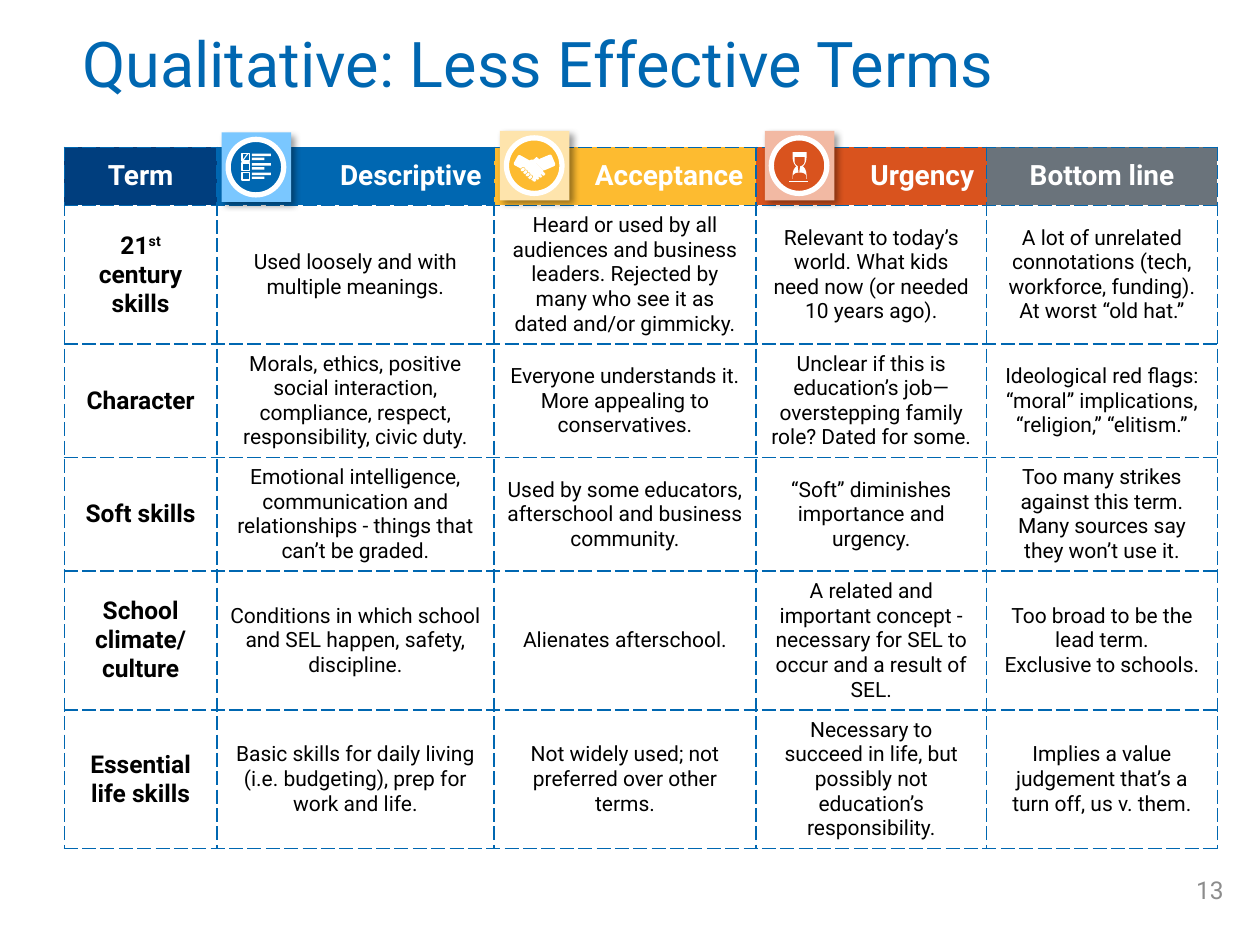
from dataclasses import dataclass
from math import cos, pi, sin

from lxml import etree
from pptx import Presentation
from pptx.dml.color import RGBColor
from pptx.enum.shapes import MSO_SHAPE
from pptx.enum.text import MSO_ANCHOR, PP_ALIGN
from pptx.oxml import parse_xml
from pptx.oxml.ns import nsdecls, qn
from pptx.util import Cm, Pt

RECT, ROUND, OVAL = MSO_SHAPE.RECTANGLE, MSO_SHAPE.ROUNDED_RECTANGLE, MSO_SHAPE.OVAL
FINGER, TRIANGLE = MSO_SHAPE.FLOWCHART_TERMINATOR, MSO_SHAPE.ISOSCELES_TRIANGLE
LEFT, CENTER, RIGHT = PP_ALIGN.LEFT, PP_ALIGN.CENTER, PP_ALIGN.RIGHT
MIDDLE = MSO_ANCHOR.MIDDLE
FONT = "Roboto"
TITLE_ONLY = 5

COLORS = {
    "navy": "003E7E", "blue": "0067B1", "sky": "7AC7FF",
    "gold": "FDBB30", "cream": "FEE4AC", "orange": "D9531E", "peach": "F2B9A3",
    "slate": "6A737B", "gray": "8C8C8C", "white": "FFFFFF", "black": "000000",
}

HEADERS = [
    ("Term", "navy", CENTER), ("Descriptive", "blue", RIGHT),
    ("Acceptance", "gold", RIGHT), ("Urgency", "orange", RIGHT),
    ("Bottom line", "slate", CENTER),
]
TERMS = [
    ["21st century skills", "Used loosely and with multiple meanings.",
     "Heard or used by all audiences and business leaders. Rejected by many who see it "
     "as dated and/or gimmicky.",
     "Relevant to today’s world. What kids need now (or needed 10 years ago).",
     "A lot of unrelated connotations (tech, workforce, funding). At worst “old hat.”"],
    ["Character",
     "Morals, ethics, positive social interaction, compliance, respect, responsibility, "
     "civic duty.",
     "Everyone understands it. More appealing to conservatives.",
     "Unclear if this is education’s job—overstepping family role? Dated for some.",
     "Ideological red flags: “moral” implications, “religion,” “elitism.”"],
    ["Soft skills",
     "Emotional intelligence, communication and relationships - things that can’t be graded.",
     "Used by some educators, afterschool and business community.",
     "“Soft” diminishes importance and urgency.",
     "Too many strikes against this term. Many sources say they won’t use it."],
    ["School climate/ culture",
     "Conditions in which school and SEL happen, safety, discipline.",
     "Alienates afterschool.",
     "A related and important concept - necessary for SEL to occur and a result of SEL.",
     "Too broad to be the lead term.\nExclusive to schools."],
    ["Essential life skills",
     "Basic skills for daily living (i.e. budgeting), prep for work and life.",
     "Not widely used; not preferred over other terms.",
     "Necessary to succeed in life, but possibly not education’s responsibility.",
     "Implies a value judgement that’s a turn off, us v. them."],
]
COLUMN_WIDTHS = [3.07, 5.59, 5.28, 4.65, 4.65]
ROW_HEIGHTS = [1.17, 2.79, 2.29, 2.29, 2.79, 2.29]


@dataclass
class Piece:
    """A preset shape inside a badge, in cm from the badge corner."""
    kind: int
    x: float
    y: float
    w: float
    h: float
    rotation: float = 0
    fill: str | None = "white"
    line: str | None = None
    weight: float = 0.25


@dataclass
class Bulb:
    """A flat-based dome of the hourglass, in cm from the badge corner."""
    half_width: float
    base: float
    shoulder: float
    tip: float
    fill: str = "white"


@dataclass
class Badge:
    x: float
    y: float
    square: str
    disc: str
    symbol: list


HANDSHAKE = [
    Piece(ROUND, 0.30, 0.53, 0.30, 0.23, 29.1),
    *[Piece(FINGER, 0.51 + 0.06 * i, 0.89 - 0.04 * i, 0.25, 0.08, 45.3, line="gold")
      for i in range(4)],
    Piece(ROUND, 0.48, 0.64, 0.36, 0.30, 45.1),
    *[Piece(OVAL, 0.56 - 0.05 * i, 0.89 - 0.05 * i, 0.10, 0.08, 324.7, line="gold")
      for i in range(4)],
    Piece(FINGER, 0.53, 0.61, 0.23, 0.08, 322.8),
    Piece(ROUND, 0.76, 0.51, 0.10, 0.30, 313.8),
    Piece(ROUND, 0.81, 0.51, 0.28, 0.25, 336.8),
]
HOURGLASS = [
    Bulb(0.14, 1.02, 0.89, 0.69), Bulb(0.14, 0.41, 0.53, 0.74),
    *[Piece(RECT, 0.48, y, 0.41, 0.05, line="orange", weight=0.85) for y in (0.36, 0.99)],
    Bulb(0.10, 0.53, 0.61, 0.71, "orange"), Bulb(0.13, 0.97, 0.91, 0.84, "orange"),
    Piece(TRIANGLE, 0.66, 0.69, 0.05, 0.20, 180, "orange"),
]
ROWS_Y = [0.43 + 0.19 * i for i in range(3)]
CHECKLIST = [
    *[Piece(RECT, 0.41, y, 0.15, 0.15, fill=None, line="white", weight=0.85) for y in ROWS_Y],
    *[Piece(RECT, 0.61, y + dy, w, 0.05) for y in ROWS_Y for dy, w in ((0, 0.38), (0.08, 0.25))],
]
BADGES = [
    Badge(10.08, 2.64, "cream", "gold", HANDSHAKE),
    Badge(15.42, 2.64, "peach", "orange", HOURGLASS),
    Badge(4.47, 2.67, "sky", "blue", CHECKLIST),
]


def rgb(name: str) -> RGBColor:
    return RGBColor.from_string(COLORS[name])


def style_text(frame, size: float, color: str, align, bold: bool = False) -> None:
    for paragraph in frame.paragraphs:
        paragraph.alignment = align
        for run in paragraph.runs:
            run.font.name, run.font.size, run.font.bold = FONT, Pt(size), bold
            run.font.color.rgb = rgb(color)


def paint(shape, fill: str | None, line: str | None = None, weight: float = 0) -> None:
    shape.shadow.inherit = False
    if fill:
        shape.fill.solid()
        shape.fill.fore_color.rgb = rgb(fill)
    else:
        shape.fill.background()
    if line:
        shape.line.color.rgb, shape.line.width = rgb(line), Pt(weight)
    else:
        shape.line.fill.background()


def add_piece(shapes, badge: Badge, piece: Piece):
    shape = shapes.add_shape(piece.kind, Cm(badge.x + piece.x), Cm(badge.y + piece.y),
                             Cm(piece.w), Cm(piece.h))
    shape.rotation = piece.rotation
    paint(shape, piece.fill, piece.line, piece.weight)
    return shape


def add_bulb(shapes, badge: Badge, bulb: Bulb) -> None:
    center, steps = badge.x + 0.70, 16
    dome = [(Cm(center - bulb.half_width * cos(pi * i / steps)),
             Cm(badge.y + bulb.shoulder + (bulb.tip - bulb.shoulder) * sin(pi * i / steps)))
            for i in range(steps + 1)]
    base = Cm(badge.y + bulb.base)
    builder = shapes.build_freeform(dome[0][0], base)
    builder.add_line_segments(dome + [(dome[-1][0], base)], close=True)
    paint(builder.convert_to_shape(), bulb.fill)


def add_badge(slide, badge: Badge):
    shapes = slide.shapes.add_group_shape().shapes
    square = add_piece(shapes, badge, Piece(RECT, 0, 0, 1.4, 1.4, fill=badge.square))
    shadow = etree.SubElement(square._element.spPr.find(qn("a:effectLst")), qn("a:outerShdw"),
                              blurRad=str(Pt(4)), dist=str(Pt(3)), dir="2700000")
    tint = etree.SubElement(shadow, qn("a:srgbClr"), val=COLORS["black"])
    etree.SubElement(tint, qn("a:alpha"), val="40000")
    add_piece(shapes, badge, Piece(OVAL, 0.13, 0.14, 1.12, 1.12, 0, badge.disc, "white", 3))
    for piece in badge.symbol:
        (add_bulb if isinstance(piece, Bulb) else add_piece)(shapes, badge, piece)
    return shapes


def format_cell(cell, fill: str) -> None:
    cell.vertical_anchor = MIDDLE
    for side in ("lnL", "lnR", "lnT", "lnB"):
        cell._tc.get_or_add_tcPr().append(parse_xml(
            f'<a:{side} {nsdecls("a")} w="{Pt(1)}"><a:solidFill><a:srgbClr '
            f'val="{COLORS["blue"]}"/></a:solidFill><a:prstDash val="sysDash"/></a:{side}>'))
    cell.fill.solid()
    cell.fill.fore_color.rgb = rgb(fill)


def add_terms_table(slide) -> None:
    table = slide.shapes.add_table(len(ROW_HEIGHTS), len(COLUMN_WIDTHS), Cm(1.3), Cm(2.97),
                                   Cm(sum(COLUMN_WIDTHS)), Cm(sum(ROW_HEIGHTS))).table
    for column, width in zip(table.columns, COLUMN_WIDTHS):
        column.width = Cm(width)
    for row, height in zip(table.rows, ROW_HEIGHTS):
        row.height = Cm(height)
    for c, (label, fill, align) in enumerate(HEADERS):
        cell = table.cell(0, c)
        cell.text_frame.text = label
        style_text(cell.text_frame, 16, "white", align, True)
        format_cell(cell, fill)
    for r, texts in enumerate(TERMS, 1):
        for c, text in enumerate(texts):
            cell = table.cell(r, c)
            cell.text_frame.text = text
            if text.startswith("21st"):  # raise the ordinal ending
                paragraph = cell.text_frame.paragraphs[0]
                paragraph.runs[0].text = text[:2]
                ordinal, rest = paragraph.add_run(), paragraph.add_run()
                ordinal.text, rest.text = text[2:4], text[4:]
                ordinal._r.get_or_add_rPr().set("baseline", "30000")
            style_text(cell.text_frame, 12 if c else 14, "black", CENTER, c == 0)
            format_cell(cell, "white")


def add_label(shapes, text: str, box: tuple, size: float, color: str, align):
    label = shapes.add_textbox(*map(Cm, box))
    label.text_frame.text = text
    style_text(label.text_frame, size, color, align)
    return label.text_frame


def main() -> None:
    prs = Presentation()
    prs.slide_width, prs.slide_height = Cm(25.4), Cm(19.05)
    slide = prs.slides.add_slide(prs.slide_layouts[TITLE_ONLY])

    # Title and page number
    title = slide.shapes.title
    title.left, title.top, title.width, title.height = map(Cm, (1.4, 0, 19.91, 2.69))
    title.text_frame.text = "Qualitative: Less Effective Terms"
    title.text_frame.vertical_anchor = MIDDLE
    title.text_frame.paragraphs[0].line_spacing = 0.9
    style_text(title.text_frame, 36, "blue", LEFT)
    page = add_label(slide.shapes, "13", (23.04, 17.42, 1.88, 1.02), 14, "gray", RIGHT)
    page.word_wrap, page.vertical_anchor = True, MIDDLE

    # Table, then the badges over its header row
    add_terms_table(slide)
    for badge in BADGES:
        shapes = add_badge(slide, badge)
    # Tick in the first box of the checklist, the last badge
    tick = add_label(shapes, "✓", (badge.x + 0.36, badge.y + 0.2, 0.33, 0.61), 8, "white", LEFT)
    tick.margin_left = tick.margin_right = 0

    prs.save("out.pptx")


if __name__ == "__main__":
    main()
